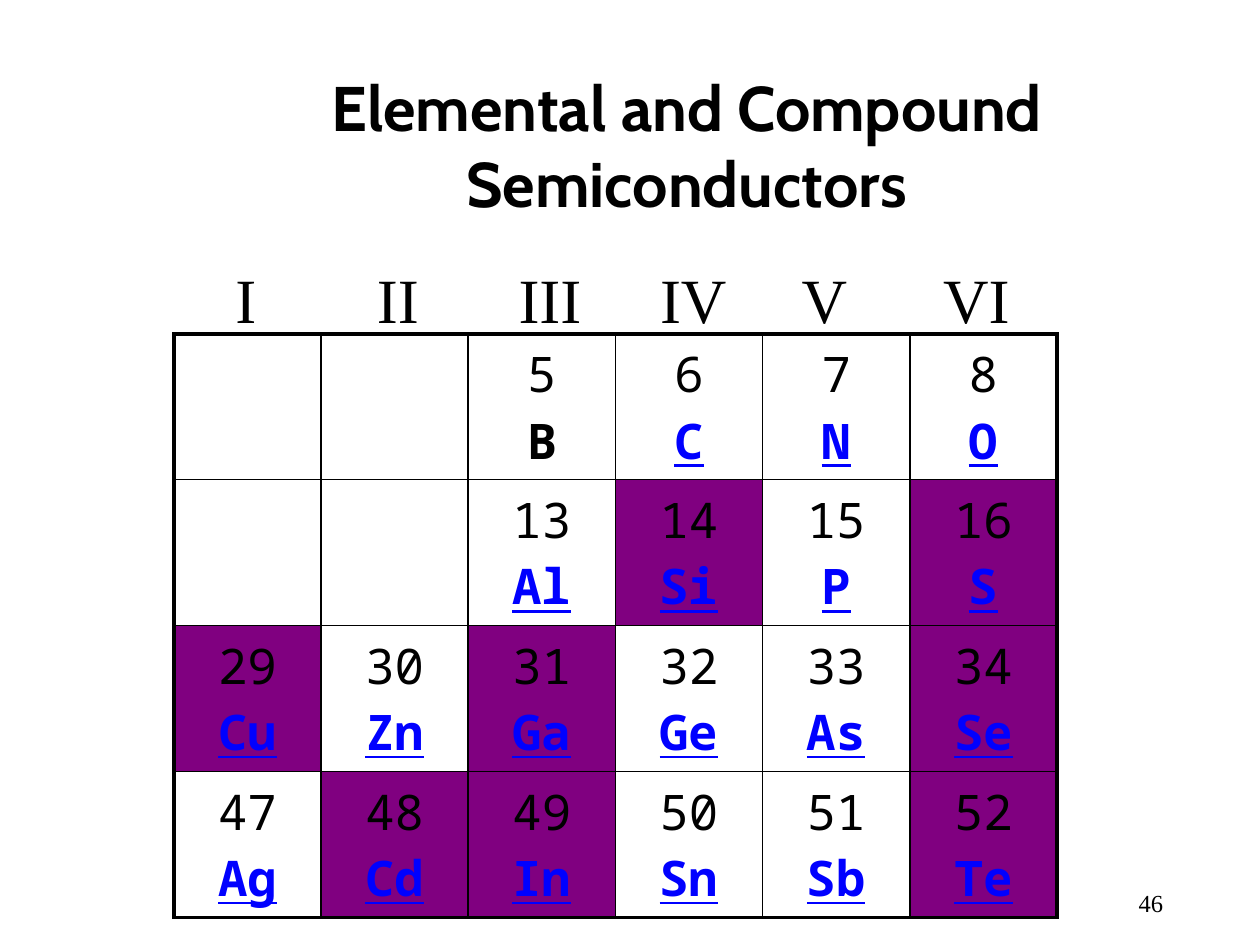
"""Build the slide on elemental and compound semiconductors."""
from lxml.etree import SubElement
from pptx import Presentation
from pptx.dml.color import RGBColor
from pptx.enum.text import MSO_ANCHOR as Anchor, PP_ALIGN as Align
from pptx.oxml.ns import qn
from pptx.util import Inches, Pt

COLORS = {"ink": "000000", "symbol": "0000FF", "plain": "FFFFFF", "marked": "800080"}
MARKED = {"Si", "S", "Cu", "Ga", "Se", "Cd", "In", "Te"}
PERIODS = [
    ["", "", "5 B", "6 C", "7 N", "8 O"],
    ["", "", "13 Al", "14 Si", "15 P", "16 S"],
    ["29 Cu", "30 Zn", "31 Ga", "32 Ge", "33 As", "34 Se"],
    ["47 Ag", "48 Cd", "49 In", "50 Sn", "51 Sb", "52 Te"],
]
GROUPS = ["I", "II", "III", "IV", "V", "VI"]


def style(run, font, size, color="ink", bold=False, underline=False):
    run.font.name = font
    run.font.size = Pt(size)
    run.font.bold = bold
    run.font.underline = underline
    run.font.color.rgb = RGBColor.from_string(COLORS[color])


def add_text(box, text, font, size, align, anchor, bold=False):
    frame = slide.shapes.add_textbox(*map(Inches, box)).text_frame
    frame.word_wrap = True
    frame.vertical_anchor = anchor
    frame.text = text
    paragraph = frame.paragraphs[0]
    paragraph.alignment = align
    style(paragraph.runs[0], font, size, bold=bold)
    return paragraph


deck = Presentation()
deck.slide_width, deck.slide_height = Inches(10), Inches(7.5)
slide = deck.slides.add_slide(deck.slide_layouts[6])

add_text((1.14, 0.52, 8.62, 1.25), "Elemental and Compound Semiconductors",
         "Cabin", 36, Align.CENTER, Anchor.MIDDLE, bold=True)

elements = slide.shapes.add_table(
    len(PERIODS), len(GROUPS), Inches(1.38), Inches(2.65), Inches(7.01), Inches(4.63)).table
elements.first_row = elements.horz_banding = False

for row, entries in enumerate(PERIODS):
    for col, entry in enumerate(entries):
        cell = elements.cell(row, col)
        number, _, symbol = entry.partition(" ")
        if entry:
            cell.text_frame.text = f"{number}\v{symbol}"
            paragraph = cell.text_frame.paragraphs[0]
            paragraph.alignment = Align.CENTER
            number_run, symbol_run = paragraph.runs
            linked = symbol != "B"
            style(number_run, "Noto Sans Mono", 28)
            style(symbol_run, "Noto Sans Mono", 28, "symbol" if linked else "ink", True, linked)
        outer_edges = {"lnL": col == 0, "lnR": col == len(GROUPS) - 1,
                       "lnT": row == 0, "lnB": row == len(PERIODS) - 1}
        properties = cell._tc.get_or_add_tcPr()
        for edge, outer in outer_edges.items():
            line = SubElement(properties, qn(f"a:{edge}"), w=str(Pt(2.25 if outer else 1)))
            SubElement(SubElement(line, qn("a:solidFill")), qn("a:srgbClr"), val=COLORS["ink"])
        cell.fill.solid()
        cell.fill.fore_color.rgb = RGBColor.from_string(
            COLORS["marked" if symbol in MARKED else "plain"])

headings = add_text((1.77, 2.02, 6.61, 0.7), "\t".join(GROUPS),
                    "Times New Roman", 36, Align.LEFT, Anchor.BOTTOM)
tab_stops = SubElement(headings._p.get_or_add_pPr(), qn("a:tabLst"))
for stop in range(1, len(GROUPS)):
    SubElement(tab_stops, qn("a:tab"), pos=str(Inches(6.74 * stop / len(GROUPS))), algn="l")

add_text((7.25, 6.83, 2.08, 0.5), "46", "Times New Roman", 14, Align.RIGHT, Anchor.BOTTOM)

deck.save("out.pptx")
